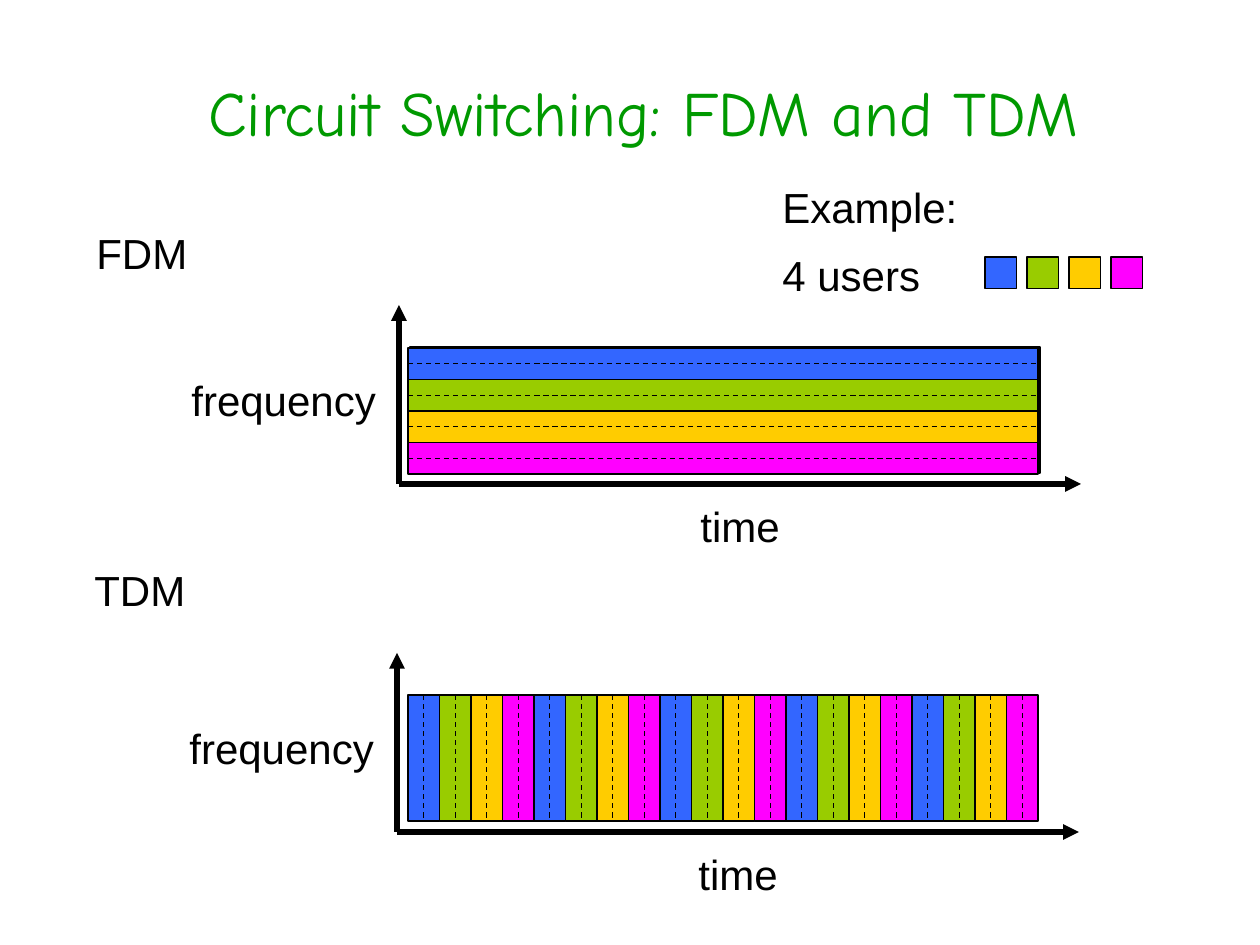
from lxml import etree
from pptx import Presentation
from pptx.dml.color import RGBColor
from pptx.enum.dml import MSO_LINE
from pptx.enum.shapes import MSO_CONNECTOR, MSO_SHAPE
from pptx.enum.text import MSO_ANCHOR, PP_ALIGN
from pptx.oxml.ns import qn
from pptx.util import Pt

RECTANGLE = MSO_SHAPE.RECTANGLE
STRAIGHT = MSO_CONNECTOR.STRAIGHT
DASH = MSO_LINE.DASH
LEFT, CENTER = PP_ALIGN.LEFT, PP_ALIGN.CENTER
TOP, MIDDLE = MSO_ANCHOR.TOP, MSO_ANCHOR.MIDDLE

SCALE = 914400 / 126  # EMU per px
BLACK = "000000"
USER_COLORS = ["3366FF", "99CC00", "FFCC00", "FF00FF"]


def color(hex_string):
    return RGBColor.from_string(hex_string)


def add_text(text, box, size=24, font="Arial", fill=BLACK, align=LEFT, anchor=TOP, wrap=False):
    shape = slide.shapes.add_textbox(*(round(value * SCALE) for value in box))
    frame = shape.text_frame
    frame.word_wrap = wrap
    frame.vertical_anchor = anchor
    paragraph = frame.paragraphs[0]
    paragraph.alignment = align
    run = paragraph.add_run()
    run.text = text
    run.font.size = Pt(size)
    run.font.name = font
    run.font.color.rgb = color(fill)


presentation = Presentation()
presentation.slide_width = round(1260 * SCALE)
presentation.slide_height = round(945 * SCALE)
slide = presentation.slides.add_slide(presentation.slide_layouts[6])

add_text("Circuit Switching: FDM and TDM", (60, 32, 1167, 158), size=36,
         font="Comic Neue", fill="009900", align=CENTER, anchor=MIDDLE, wrap=True)
add_text("FDM", (84, 221, 116, 63))
add_text("TDM", (82, 558, 116, 63))
add_text("Example:", (770, 175, 200, 63))
add_text("4 users", (770, 243, 164, 63))

# Each line is (start x, start y, end x, end y)
axes = []
for dx, dy in [(0, 0), (-2, 348)]:
    add_text("frequency", (179 + dx, 368 + dy, 210, 63))
    add_text("time", (688 + dx, 494 + dy, 105, 63))
    origin = (399 + dx, 484 + dy)
    axes.append((*origin, origin[0], 305 + dy))
    axes.append((*origin, 1081 + dx, origin[1]))

# Both plots share their left edge and size; a band is a quarter of the height
plot_left, plot_width, plot_height = 408, 630, 126
fdm_top, tdm_top = 348, 695
band = plot_height / 4
slot_count = 20

rectangles = [((410, 347, plot_width, plot_height), "0099CC")]
for index, user_color in enumerate(USER_COLORS):
    rectangles.append(((plot_left, fdm_top + index * band, plot_width, band), user_color))
    rectangles.append(((985 + index * 42, 257, band, band), user_color))
for slot in range(slot_count):
    rectangles.append(((plot_left + slot * band, tdm_top, band, plot_height),
                       USER_COLORS[slot % 4]))

for box, fill in rectangles:
    shape = slide.shapes.add_shape(RECTANGLE, *(round(value * SCALE) for value in box))
    shape.shadow.inherit = False
    shape.fill.solid()
    shape.fill.fore_color.rgb = color(fill)
    shape.line.color.rgb = color(BLACK)
    shape.line.width = Pt(0.75)

# Separators lie on whole bands, dashed lines halfway between them
separators, dashes = [], []
for lines, shift in [(separators, 1), (dashes, 0.5)]:
    last = 1 if lines is separators else 0
    for index in range(4 - last):
        y = fdm_top + (index + shift) * band
        lines.append((plot_left, y, plot_left + plot_width, y))
    for slot in range(slot_count - last):
        x = plot_left + (slot + shift) * band
        lines.append((x, tdm_top, x, tdm_top + plot_height))

for lines, width in [(axes, 3), (separators, 0.75), (dashes, 0.75)]:
    for ends in lines:
        connector = slide.shapes.add_connector(
            STRAIGHT, *(round(value * SCALE) for value in ends))
        connector.line.color.rgb = color(BLACK)
        connector.line.width = Pt(width)
        if lines is dashes:
            connector.line.dash_style = DASH
        properties = connector.element.spPr
        if lines is axes:
            etree.SubElement(properties.find(qn("a:ln")), qn("a:tailEnd"), type="triangle")
        etree.SubElement(properties, qn("a:effectLst"))

presentation.save("out.pptx")
